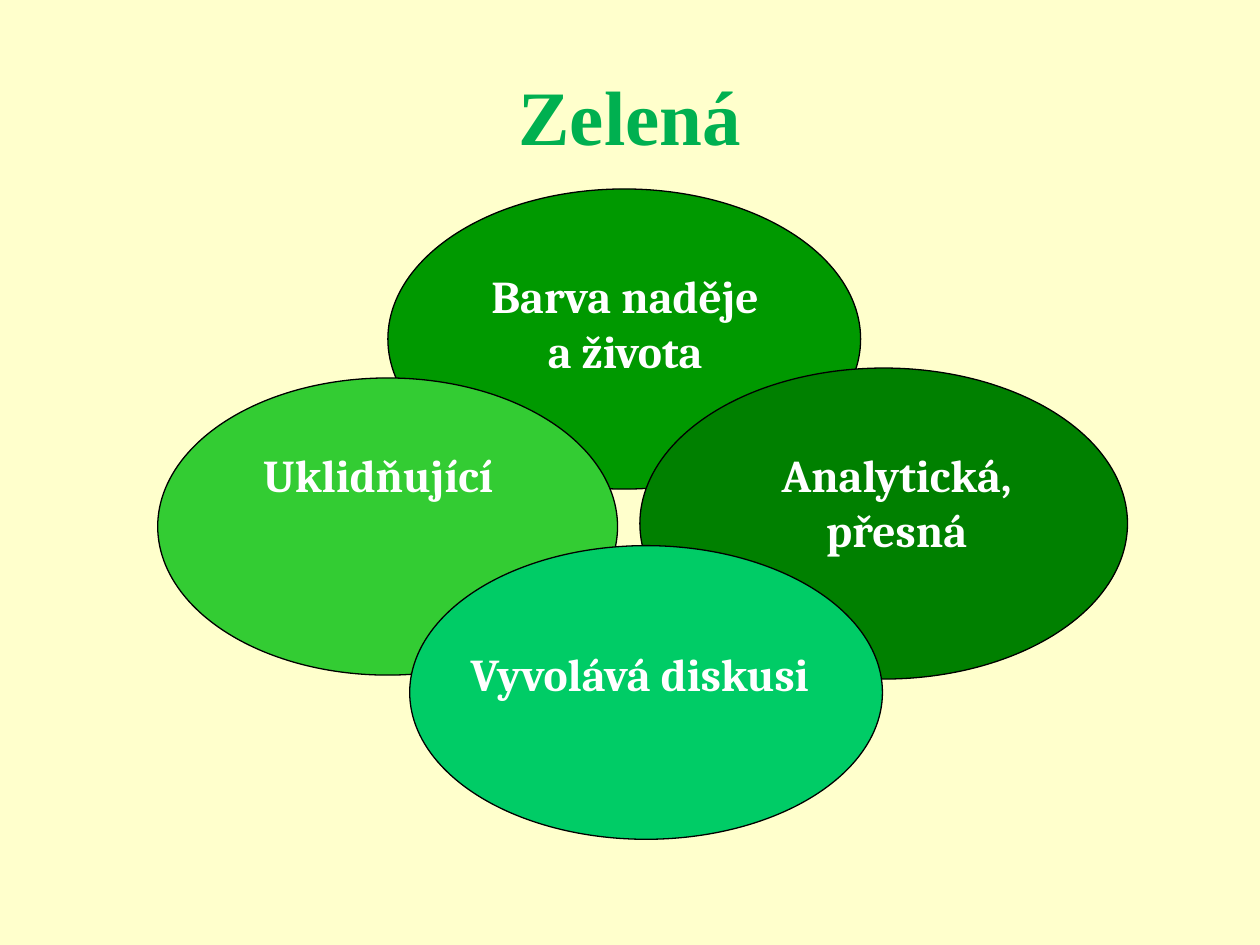
from pptx import Presentation
from pptx.dml.color import RGBColor
from pptx.enum.shapes import MSO_SHAPE
from pptx.enum.text import MSO_ANCHOR, PP_ALIGN
from pptx.util import Cm, Pt

OVAL = MSO_SHAPE.OVAL
TOP, MIDDLE = MSO_ANCHOR.TOP, MSO_ANCHOR.MIDDLE
CENTER = PP_ALIGN.CENTER

CREAM = RGBColor(0xFF, 0xFF, 0xCC)
TITLE_GREEN = RGBColor(0x00, 0xB0, 0x50)
LEAF = RGBColor(0x00, 0x99, 0x00)
LIME = RGBColor(0x33, 0xCC, 0x33)
FOREST = RGBColor(0x00, 0x80, 0x00)
MINT = RGBColor(0x00, 0xCC, 0x66)
BLACK = RGBColor(0x00, 0x00, 0x00)
WHITE = RGBColor(0xFF, 0xFF, 0xFF)


def add_text(page, place, text, font, size, color, anchor):
    box = page.shapes.add_textbox(*map(Cm, place))
    frame = box.text_frame
    frame.word_wrap = True
    frame.vertical_anchor = anchor
    para = frame.paragraphs[0]
    para.text = text
    para.alignment = CENTER
    para.font.name = font
    para.font.size = Pt(size)
    para.font.bold = True
    para.font.color.rgb = color


deck = Presentation()
deck.slide_width = Cm(25.4)
deck.slide_height = Cm(19.05)
page = deck.slides.add_slide(deck.slide_layouts[6])
page.background.fill.solid()
page.background.fill.fore_color.rgb = CREAM

add_text(page, (1.9, 1.47, 21.6, 1.68), "Zelená",
         "Times New Roman", 44, TITLE_GREEN, MIDDLE)

# left, top, width, height in cm; later ovals overlap earlier ones
ovals = [
    ((7.82, 3.81, 9.53, 6.05), LEAF),
    ((3.18, 7.62, 9.27, 5.99), LIME),
    ((12.9, 7.42, 9.83, 6.27), FOREST),
    ((8.26, 11, 9.53, 5.92), MINT),
]
for place, color in ovals:
    oval = page.shapes.add_shape(OVAL, *map(Cm, place))
    oval.shadow.inherit = False
    oval.fill.solid()
    oval.fill.fore_color.rgb = color
    oval.line.color.rgb = BLACK
    oval.line.width = Pt(0.75)

labels = [
    ((9.53, 5.28, 6.15, 4.11), "Barva naděje a života"),
    ((14.17, 8.89, 7.82, 2.46), "Analytická, přesná"),
    ((4.45, 8.89, 6.35, 1.35), "Uklidňující"),
    ((9.09, 12.9, 7.62, 1.35), "Vyvolává diskusi"),
]
for place, text in labels:
    add_text(page, place, text, "Cambria", 26, WHITE, TOP)

deck.save("out.pptx")
